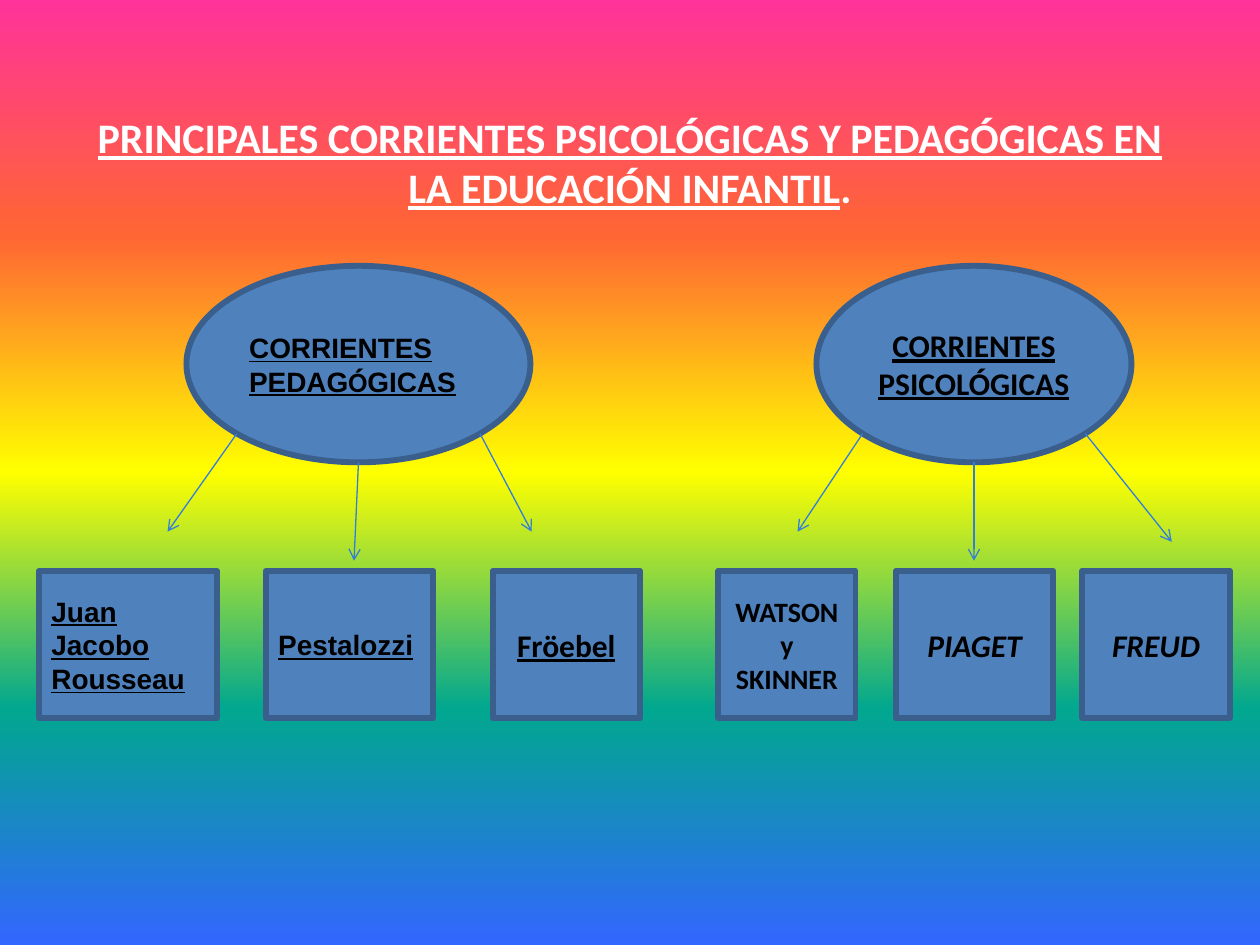
from math import sqrt

from lxml.etree import SubElement
from pptx import Presentation
from pptx.dml.color import RGBColor
from pptx.enum.shapes import MSO_CONNECTOR as Link, MSO_SHAPE as Shape
from pptx.enum.text import MSO_ANCHOR as Anchor, PP_ALIGN as Align
from pptx.oxml.ns import qn
from pptx.util import Inches, Pt

WHITE, BLACK = RGBColor(255, 255, 255), RGBColor(0, 0, 0)
BLUE, EDGE = RGBColor(0x4F, 0x81, 0xBD), RGBColor(0x3A, 0x5F, 0x8C)
ARROW = RGBColor(0x33, 0x7E, 0xD9)
RAINBOW = ["FF3399", "FF6633", "FFFF00", "01A78F", "3366FF"]

# Text formats
ARIAL = dict(name="Arial", size=Pt(16), bold=True, underline=True)
ACCENT = ARIAL | dict(name="Calibri")
CALIBRI = ACCENT | dict(size=Pt(18))
TITLE = CALIBRI | dict(size=Pt(24))
PLAIN = ACCENT | dict(underline=False)
ITALIC = CALIBRI | dict(underline=False, italic=True)

# Content: title, then each current with its authors and arrow tips
HEADING = [
    ("PRINCIPALES CORRIENTES PSICOLÓGICAS Y PEDAGÓGICAS EN LA EDUCACIÓN INFANTIL", TITLE),
    (".", TITLE | dict(underline=False)),
]
CURRENTS = [
    dict(left=1.48, width=2.73, align=Align.LEFT,
         spans=[("CORRIENTES PEDAG", ARIAL), ("Ó", ACCENT), ("GICAS", ARIAL)],
         tips=[(1.33, 4.22), (2.81, 4.45), (4.22, 4.22)],
         authors=[(0.31, 1.41, "Juan Jacobo Rousseau", ARIAL, Align.LEFT),
                  (2.11, 1.33, "Pestalozzi", ARIAL, Align.LEFT),
                  (3.91, 1.17, "Fröebel", CALIBRI, Align.CENTER)]),
    dict(left=6.48, width=2.5, align=Align.CENTER,
         spans=[("CORRIENTES PSICOLÓGICAS", CALIBRI)],
         tips=[(6.33, 4.22), (7.73, 4.45), (9.3, 4.3)],
         authors=[(5.7, 1.09, "WATSON y SKINNER", PLAIN, Align.CENTER),
                  (7.11, 1.25, "PIAGET", ITALIC, Align.CENTER),
                  (8.59, 1.17, "FREUD", ITALIC, Align.CENTER)]),
]
OVAL_TOP, OVAL_HEIGHT = 2.11, 1.56
AUTHOR_TOP, AUTHOR_HEIGHT = 4.53, 1.17

deck = Presentation()
deck.slide_width, deck.slide_height = Inches(10), Inches(7.5)
page = deck.slides.add_slide(deck.slide_layouts[6])


def write(box, spans, align, color):
    frame = box.text_frame
    frame.word_wrap = True
    frame.vertical_anchor = Anchor.MIDDLE
    para = frame.paragraphs[0]
    para.alignment = align
    for text, style in spans:
        span = para.add_run()
        span.text = text
        span.font.color.rgb = color
        for key, value in style.items():
            setattr(span.font, key, value)


def add_node(kind, left, top, width, height, spans, align):
    node = page.shapes.add_shape(kind, *map(Inches, (left, top, width, height)))
    node.shadow.inherit = False
    node.fill.solid()
    node.fill.fore_color.rgb = BLUE
    node.line.color.rgb = EDGE
    node.line.width = Pt(3.35)
    write(node, spans, align, BLACK)


def add_arrow(start, tip):
    arrow = page.shapes.add_connector(Link.STRAIGHT, *map(Inches, start + tip))
    arrow.line.color.rgb = ARROW
    arrow.line.width = Pt(0.75)
    props = arrow.element.spPr
    SubElement(props.find(qn("a:ln")), qn("a:tailEnd"), type="arrow")
    SubElement(props, qn("a:effectLst"))


# Rainbow background, evenly spaced from top to bottom
backdrop = page.background.fill
backdrop.gradient()
backdrop.gradient_angle = 270
stops = page.element.find(".//" + qn("a:gsLst"))
for stop in list(stops):
    stops.remove(stop)
for index, color in enumerate(RAINBOW):
    stop = SubElement(stops, qn("a:gs"), pos=str(index * 25000))
    SubElement(stop, qn("a:srgbClr"), val=color)

# Title, lifted to the upper part of its box by the bottom inset
title = page.shapes.add_textbox(*map(Inches, (0.5, 0, 9, 6.41)))
title.text_frame.margin_top = 0
title.text_frame.margin_bottom = Inches(3.84)
write(title, HEADING, Align.CENTER, WHITE)

# Ovals, arrows from their lower rim, and author boxes
for current in CURRENTS:
    left, width = current["left"], current["width"]
    add_node(Shape.OVAL, left, OVAL_TOP, width, OVAL_HEIGHT,
             current["spans"], current["align"])
    center, middle = left + width / 2, OVAL_TOP + OVAL_HEIGHT / 2
    diagonal = sqrt(0.5)
    rim = [(-diagonal, diagonal), (0, 1), (diagonal, diagonal)]
    for (across, down), tip in zip(rim, current["tips"]):
        start = (center + across * width / 2, middle + down * OVAL_HEIGHT / 2)
        add_arrow(start, tip)
    for x, size, name, style, align in current["authors"]:
        add_node(Shape.RECTANGLE, x, AUTHOR_TOP, size, AUTHOR_HEIGHT,
                 [(name, style)], align)

deck.save("out.pptx")
